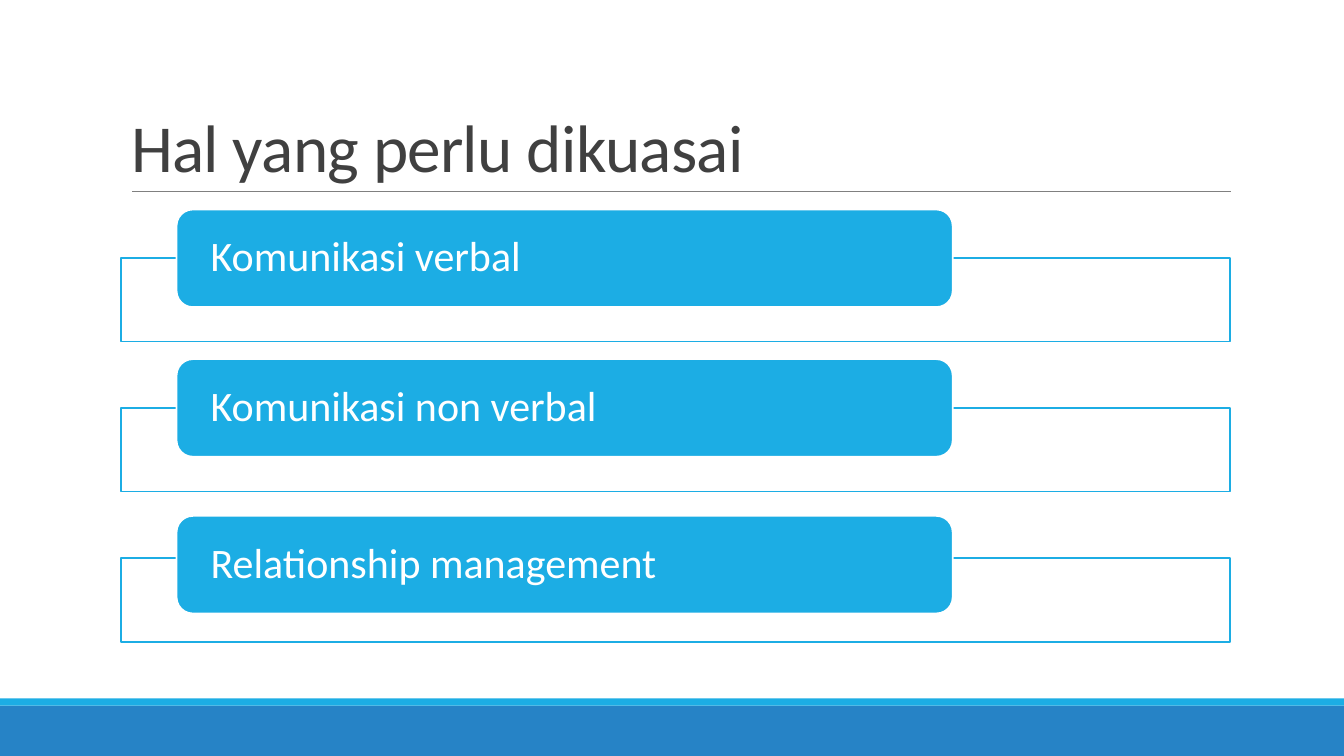
import pptx
import pptx.util
import pptx.dml.color
import pptx.enum.shapes
import pptx.enum.text
import pptx.oxml

Cm = pptx.util.Cm
Pt = pptx.util.Pt
Kind = pptx.enum.shapes.MSO_SHAPE
Anchor = pptx.enum.text.MSO_ANCHOR
Align = pptx.enum.text.PP_ALIGN

SKY = "1CADE4"
BLUE = "2683C6"
WHITE = "FFFFFF"


def tint(color, code):
    color.rgb = pptx.dml.color.RGBColor.from_string(code)


def block(kind, left, top, width, height, fill, edge=None):
    """Add a flat shape, sized in centimetres, with an optional outline."""
    shape = slide.shapes.add_shape(kind, Cm(left), Cm(top), Cm(width), Cm(height))
    shape.shadow.inherit = False
    shape.fill.solid()
    tint(shape.fill.fore_color, fill)
    if edge:
        tint(shape.line.color, edge)
        shape.line.width = Pt(1.25)
    else:
        shape.line.fill.background()
    return shape


deck = pptx.Presentation()
deck.slide_width = Cm(33.87)
deck.slide_height = Cm(19.05)
slide = deck.slides.add_slide(deck.slide_layouts[5])

# Footer bands
block(Kind.RECTANGLE, 0, 17.78, 33.87, 1.27, BLUE)
block(Kind.RECTANGLE, 0, 17.6, 33.87, 0.18, SKY)

# Title and rule
title = slide.shapes.title
title.left, title.top = Cm(3.05), Cm(0.79)
title.width, title.height = Cm(27.94), Cm(4.04)
frame = title.text_frame
frame.auto_size = pptx.enum.text.MSO_AUTO_SIZE.NONE
frame.word_wrap = True
frame.vertical_anchor = Anchor.BOTTOM
para = frame.paragraphs[0]
para.alignment = Align.LEFT
para.line_spacing = 0.85
run = para.add_run()
run.text = "Hal yang perlu dikuasai"
run.font.name = "Calibri"
run.font.size = Pt(48)
tint(run.font.color, "404040")
run.font._element.set("spc", "-50")

rule = slide.shapes.add_connector(
    pptx.enum.shapes.MSO_CONNECTOR.STRAIGHT, Cm(3.33), Cm(4.83), Cm(31.01), Cm(4.83))
tint(rule.line.color, "808080")
rule.line.width = Pt(0.5)
rule._element.spPr.append(pptx.oxml.parse_xml(
    '<a:effectLst xmlns:a="http://schemas.openxmlformats.org/drawingml/2006/main"/>'))

# Skills: an open box with a label over its top edge
skills = [
    ("Komunikasi verbal", 5.28),
    ("Komunikasi non verbal", 9.05),
    ("Relationship management", 13),
]
for row, (skill, top) in enumerate(skills):
    block(Kind.RECTANGLE, 3.05, 6.5 + 3.78 * row, 27.94, 2.11, WHITE, SKY)
    label = block(Kind.ROUNDED_RECTANGLE, 4.45, top, 19.56, 2.46, SKY, WHITE)
    frame = label.text_frame
    frame.word_wrap = True
    frame.vertical_anchor = Anchor.MIDDLE
    frame.margin_left = frame.margin_right = Cm(0.74)
    frame.margin_top = frame.margin_bottom = 0
    para = frame.paragraphs[0]
    para.alignment = Align.LEFT
    para.line_spacing = 0.9
    run = para.add_run()
    run.text = skill
    run.font.name = "Calibri"
    run.font.size = Pt(30)
    tint(run.font.color, WHITE)

deck.save("out.pptx")
